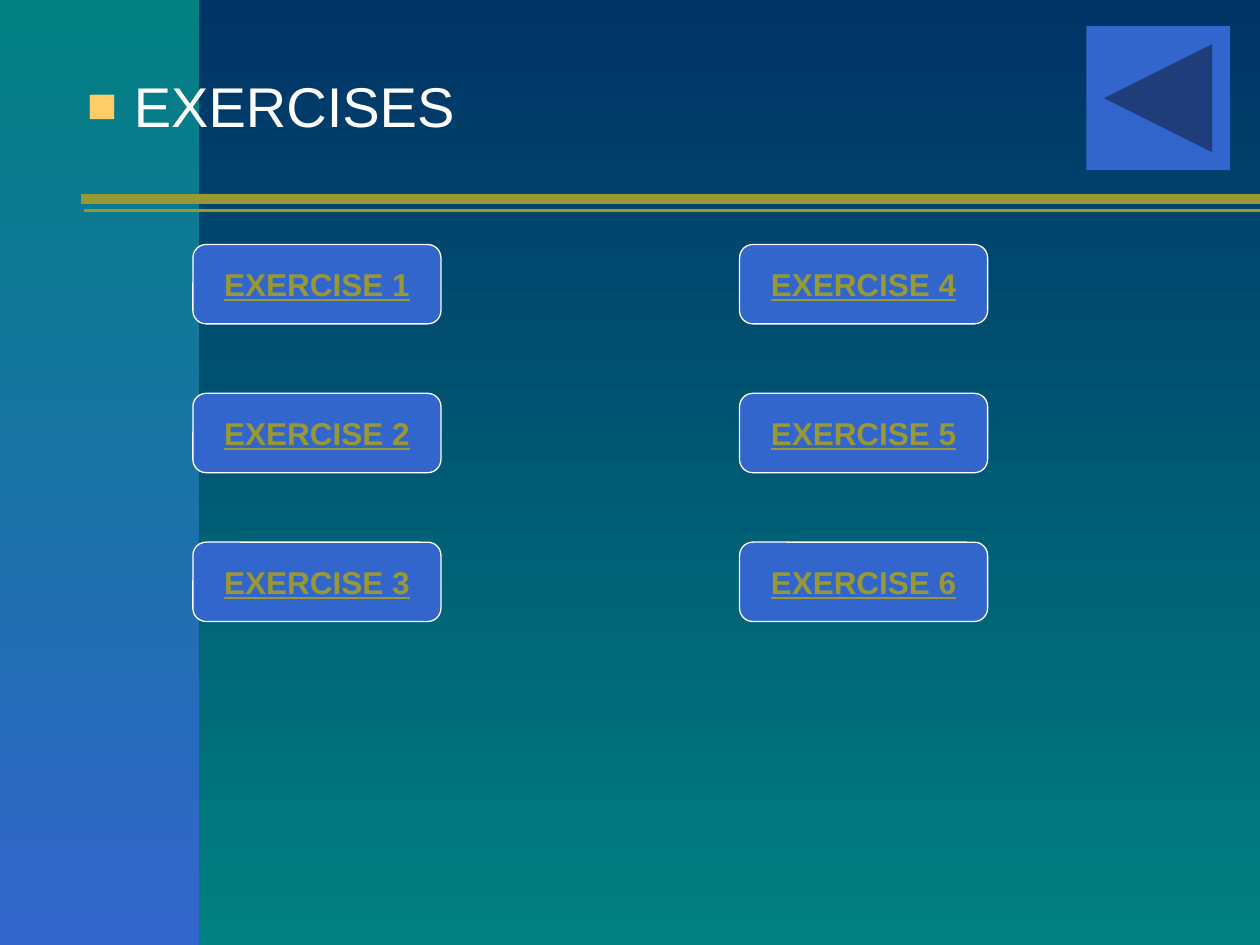
from lxml import etree
from pptx import Presentation
from pptx import util as u
from pptx.dml.color import RGBColor
from pptx.enum import shapes, text
from pptx.oxml.ns import qn

TITLE = "EXERCISES"
BUTTON_COLUMNS = [
    ["EXERCISE 1", "EXERCISE 2", "EXERCISE 3"],
    ["EXERCISE 4", "EXERCISE 5", "EXERCISE 6"],
]
RULES = [(4.24, 2), (4.01, 6)]  # height on the slide in cm, width in points

THEME = {
    "font": "Arial",
    "title_size": 32,
    "button_size": 18,
    "navy": "003366",
    "teal": "008080",
    "blue": "3366CC",
    "olive": "999933",
    "amber": "FFCC66",
    "white": "FFFFFF",
}

SLIDE_WIDTH, SLIDE_HEIGHT = 25.4, 19.05
BAND_WIDTH = 4.01
RULE_LEFT = 1.73
GRID_LEFT, GRID_TOP = 3.89, 4.93
COLUMN_STEP, ROW_STEP = 11.02, 3.0
BUTTON_WIDTH, BUTTON_HEIGHT = 5.0, 1.6


def color(name):
    return RGBColor.from_string(THEME[name])


def box(left, top, width, height):
    return [u.Cm(value) for value in (left, top, width, height)]


def fill_downward(fill, top, bottom):
    fill.gradient()
    fill.gradient_angle = 270
    for stop, position, name in zip(fill.gradient_stops, (0, 1), (top, bottom)):
        stop.position = position
        stop.color.rgb = color(name)


def style_font(paragraph, size, name):
    paragraph.font.name = THEME["font"]
    paragraph.font.size = u.Pt(THEME[size])
    paragraph.font.color.rgb = color(name)


def add_plain_shape(slide, kind, area):
    shape = slide.shapes.add_shape(kind, *box(*area))
    shape.shadow.inherit = False
    shape.line.fill.background()
    return shape


def add_rule(slide, top, width):
    rule = slide.shapes.add_connector(
        shapes.MSO_CONNECTOR.STRAIGHT,
        u.Cm(RULE_LEFT), u.Cm(top), u.Cm(SLIDE_WIDTH), u.Cm(top))
    rule.line.color.rgb = color("olive")
    rule.line.width = u.Pt(width)
    rule.line._get_or_add_ln().set("cap", "sq")
    etree.SubElement(rule._element.spPr, qn("a:effectLst"))


def add_bullet(paragraph):
    """Give the paragraph a hanging square bullet and 20% space before."""
    properties = paragraph._p.get_or_add_pPr()
    properties.set("marL", str(u.Cm(0.95)))
    properties.set("indent", str(-u.Cm(0.95)))
    space = etree.SubElement(properties, qn("a:spcBef"))
    etree.SubElement(space, qn("a:spcPct"), val="20000")
    bullet_color = etree.SubElement(properties, qn("a:buClr"))
    etree.SubElement(bullet_color, qn("a:srgbClr"), val=THEME["amber"])
    etree.SubElement(properties, qn("a:buSzPct"), val="90000")
    etree.SubElement(properties, qn("a:buFont"), typeface=THEME["font"])
    etree.SubElement(properties, qn("a:buChar"), char="■")


def add_title(slide):
    frame = slide.shapes.add_textbox(*box(1.5, 1.32, 23.19, 15.77)).text_frame
    frame.word_wrap = True
    paragraph = frame.paragraphs[0]
    paragraph.text = TITLE
    add_bullet(paragraph)
    style_font(paragraph, "title_size", "white")


def add_button(slide, label, left, top):
    button = add_plain_shape(slide, shapes.MSO_SHAPE.ROUNDED_RECTANGLE,
                             (left, top, BUTTON_WIDTH, BUTTON_HEIGHT))
    button.fill.solid()
    button.fill.fore_color.rgb = color("blue")
    button.line.color.rgb = color("white")
    button.line.width = u.Pt(0.75)
    frame = button.text_frame
    frame.word_wrap = False
    frame.vertical_anchor = text.MSO_ANCHOR.MIDDLE
    paragraph = frame.paragraphs[0]
    paragraph.text = label
    paragraph.alignment = text.PP_ALIGN.CENTER
    style_font(paragraph, "button_size", "olive")
    paragraph.font.bold = True
    paragraph.font.underline = True


def main():
    presentation = Presentation()
    presentation.slide_width = u.Cm(SLIDE_WIDTH)
    presentation.slide_height = u.Cm(SLIDE_HEIGHT)
    slide = presentation.slides.add_slide(presentation.slide_layouts[6])
    fill_downward(slide.background.fill, "navy", "teal")

    band = add_plain_shape(slide, shapes.MSO_SHAPE.RECTANGLE,
                           (0, 0, BAND_WIDTH, SLIDE_HEIGHT))
    fill_downward(band.fill, "teal", "blue")
    for top, width in RULES:
        add_rule(slide, top, width)
    add_title(slide)
    for column, labels in enumerate(BUTTON_COLUMNS):
        for row, label in enumerate(labels):
            add_button(slide, label, GRID_LEFT + column * COLUMN_STEP,
                       GRID_TOP + row * ROW_STEP)
    back = add_plain_shape(
        slide, shapes.MSO_SHAPE.ACTION_BUTTON_BACK_OR_PREVIOUS,
        (21.9, 0.53, 2.9, 2.9))
    back.fill.solid()
    back.fill.fore_color.rgb = color("blue")

    presentation.save("out.pptx")


if __name__ == "__main__":
    main()
